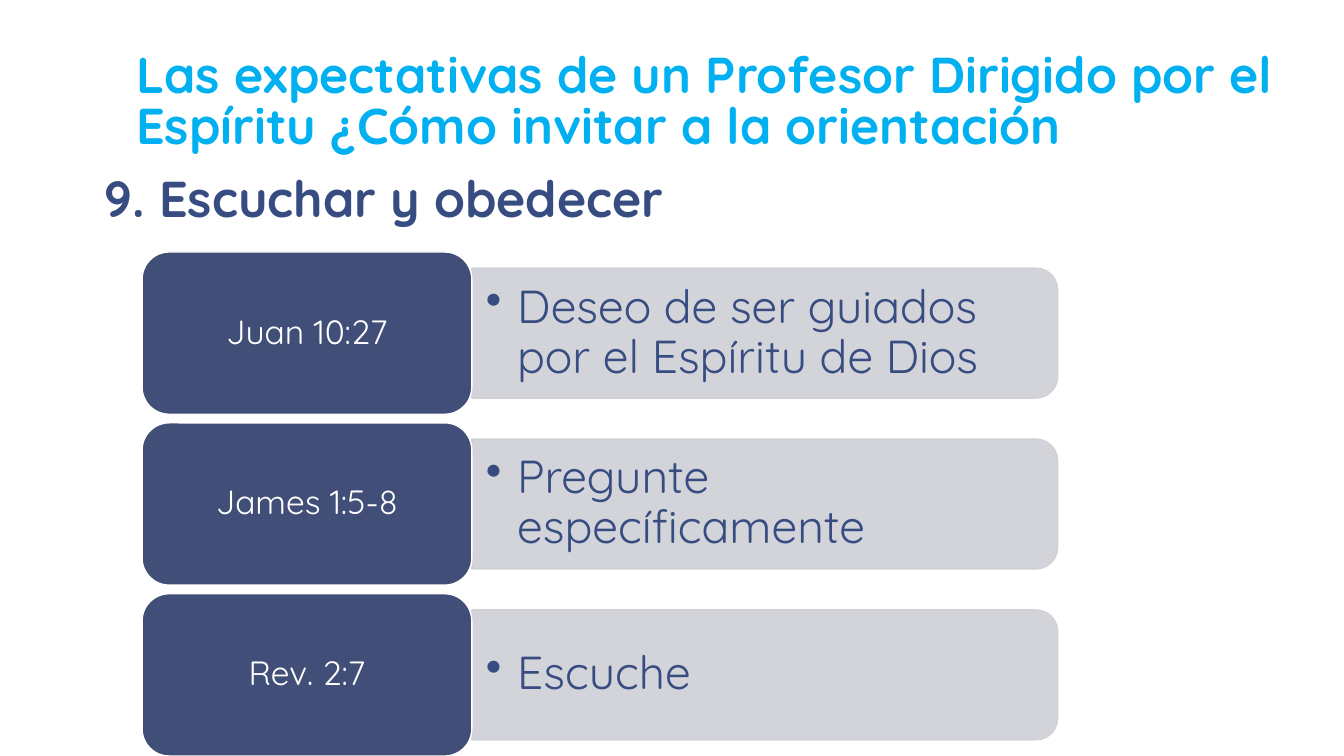
import dataclasses

import lxml.etree
import pptx
import pptx.dml.color
import pptx.enum.shapes
import pptx.enum.text
import pptx.oxml.ns
import pptx.util

SHAPE = pptx.enum.shapes.MSO_SHAPE
ALIGN = pptx.enum.text.PP_ALIGN
ANCHOR = pptx.enum.text.MSO_ANCHOR
qn = pptx.oxml.ns.qn


@dataclasses.dataclass(frozen=True)
class Theme:
    font: str = "Quicksand"
    title_color: str = "00B0F0"
    navy: str = "374C81"
    tag_fill: str = "414E77"
    panel_fill: str = "CFD0D6"
    white: str = "FFFFFF"
    heading_size: int = 36
    point_size: int = 33
    tag_size: int = 24


@dataclasses.dataclass(frozen=True)
class Box:
    left: float
    top: float
    width: float
    height: float

    def emu(self):
        return [px(v) for v in (self.left, self.top, self.width, self.height)]


THEME = Theme()
EMU_PER_PX = 9144  # 100 px to the inch
SLIDE = Box(0, 0, 1333, 750)
PASSAGES = [
    ("Juan 10:27", "Deseo de ser guiados por el Espíritu de Dios"),
    ("James 1:5-8", "Pregunte específicamente"),
    ("Rev. 2:7", "Escuche"),
]


def px(length):
    return pptx.util.Emu(round(length * EMU_PER_PX))


def rgb(color):
    return pptx.dml.color.RGBColor.from_string(color)


def write(shape, text, size, color, bold=False, align=ALIGN.LEFT,
          anchor=ANCHOR.TOP, spacing=0.9, inset=(13, 7)):
    """Fill a shape with one formatted paragraph and return the paragraph."""
    frame = shape.text_frame
    frame.word_wrap = True
    frame.auto_size = pptx.enum.text.MSO_AUTO_SIZE.NONE
    frame.vertical_anchor = anchor
    frame.margin_left = frame.margin_right = px(inset[0])
    frame.margin_top = frame.margin_bottom = px(inset[1])
    paragraph = frame.paragraphs[0]
    paragraph.alignment = align
    paragraph.line_spacing = spacing
    run = paragraph.add_run()
    run.text = text
    run.font.name = THEME.font
    run.font.size = pptx.util.Pt(size)
    run.font.bold = bold
    run.font.color.rgb = rgb(color)
    return paragraph


def add_bullet(paragraph, indent):
    properties = paragraph._p.get_or_add_pPr()
    properties.set("marL", str(px(indent)))
    properties.set("indent", str(px(-indent)))
    lxml.etree.SubElement(properties, qn("a:buChar")).set("char", "•")


def set_opacity(color_format_parent, percent):
    color = color_format_parent.find(".//" + qn("a:srgbClr"))
    lxml.etree.SubElement(color, qn("a:alpha")).set("val", str(percent * 1000))


def add_block(slide, preset, box, fill, line):
    block = slide.shapes.add_shape(preset, *box.emu())
    block.shadow.inherit = False
    block.fill.solid()
    block.fill.fore_color.rgb = rgb(fill)
    block.line.color.rgb = rgb(line)
    block.line.width = pptx.util.Pt(1)
    return block


def add_title(slide, box):
    title = slide.shapes.title
    title.left, title.top, title.width, title.height = box.emu()
    write(title, "Las expectativas de un Profesor Dirigido por el Espíritu "
          "¿Cómo invitar a la orientación", THEME.heading_size,
          THEME.title_color, bold=True, anchor=ANCHOR.BOTTOM, spacing=0.85)


def add_heading(slide, box):
    heading = slide.shapes.add_textbox(*box.emu())
    write(heading, "9. Escuchar y obedecer", THEME.heading_size, THEME.navy,
          bold=True, spacing=0.95)


def add_passage(slide, box, reference, point):
    """One row: a dark reference tag and a pale panel with its point."""
    tag_width, panel_height = 327, 129
    panel_width = box.width - tag_width

    # Panel, turned a quarter so that its rounded end faces right
    center_x = box.left + tag_width + panel_width / 2
    center_y = box.top + box.height / 2
    upright = Box(center_x - panel_height / 2, center_y - panel_width / 2,
                  panel_height, panel_width)
    panel = add_block(slide, SHAPE.ROUND_2_SAME_RECTANGLE, upright,
                      THEME.panel_fill, THEME.panel_fill)
    panel.rotation = 90
    set_opacity(panel.fill._xPr.find(qn("a:solidFill")), 90)
    set_opacity(panel.line._ln, 90)

    # Point
    point_box = Box(box.left + tag_width, center_y - 58, panel_width - 6, 116)
    point_text = slide.shapes.add_textbox(*point_box.emu())
    paragraph = write(point_text, point, THEME.point_size, THEME.navy,
                      anchor=ANCHOR.MIDDLE, inset=(14, 7))
    add_bullet(paragraph, 31)

    # Reference tag
    tag_box = Box(box.left, box.top, tag_width, box.height)
    tag = add_block(slide, SHAPE.ROUNDED_RECTANGLE, tag_box,
                    THEME.tag_fill, THEME.white)
    write(tag, reference, THEME.tag_size, THEME.white,
          align=ALIGN.CENTER, anchor=ANCHOR.MIDDLE)


def add_passages(slide, box):
    row_height = 161
    pitch = (box.height - row_height) / (len(PASSAGES) - 1)
    for index, (reference, point) in enumerate(PASSAGES):
        row = Box(box.left, box.top + index * pitch, box.width, row_height)
        add_passage(slide, row, reference, point)


def main():
    deck = pptx.Presentation()
    deck.slide_width, deck.slide_height = px(SLIDE.width), px(SLIDE.height)
    slide = deck.slides.add_slide(deck.slide_layouts[5])
    slide.background.fill.solid()
    slide.background.fill.fore_color.rgb = rgb(THEME.white)
    add_title(slide, Box(122, 8, 1169, 153))
    add_heading(slide, Box(91, 163, 1146, 70))
    add_passages(slide, Box(141, 250, 908, 500))
    deck.save("out.pptx")


if __name__ == "__main__":
    main()
